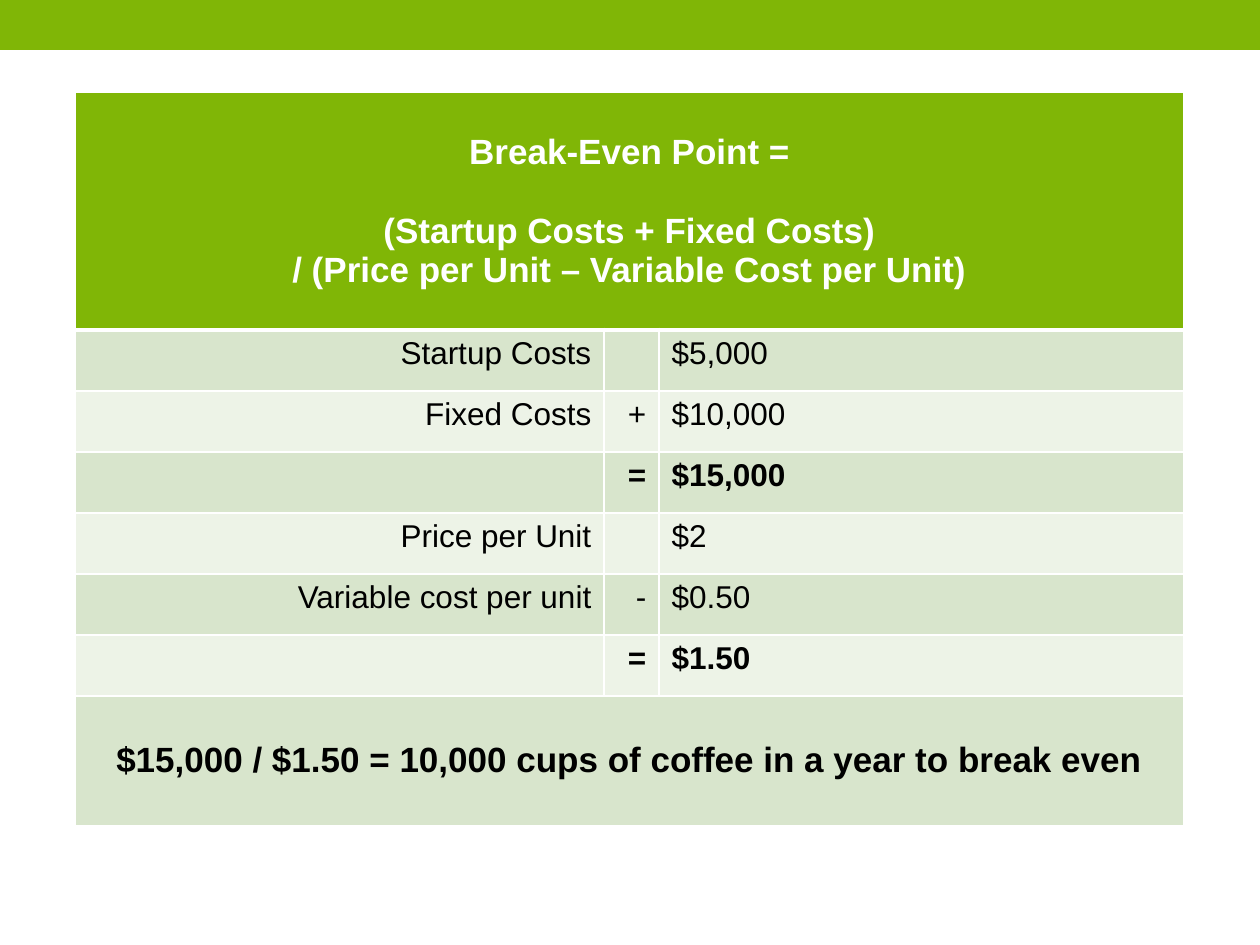
from dataclasses import dataclass

from lxml import etree
from pptx import Presentation
from pptx.dml.color import RGBColor
from pptx.enum.shapes import MSO_SHAPE
from pptx.enum.text import MSO_ANCHOR, PP_ALIGN
from pptx.oxml.ns import qn
from pptx.util import Emu, Pt

RECTANGLE = MSO_SHAPE.RECTANGLE
LEFT, CENTER, RIGHT = PP_ALIGN.LEFT, PP_ALIGN.CENTER, PP_ALIGN.RIGHT
TOP, MIDDLE = MSO_ANCHOR.TOP, MSO_ANCHOR.MIDDLE

PX_PER_INCH = 126
SLIDE_WIDTH, SLIDE_HEIGHT = 1260, 945


@dataclass(frozen=True)
class Theme:
    font: str = "Arial"
    green: str = "80B606"
    bands: tuple = ("D8E5CC", "EDF3E7")
    white: str = "FFFFFF"
    black: str = "000000"
    body_size: int = 18
    strong_size: int = 20
    formula_gap: int = 23
    border: int = 1
    header_border: int = 3


THEME = Theme()

COLUMN_WIDTHS = (529, 55, 525)
HEADER_HEIGHT, ROW_HEIGHT, RESULT_HEIGHT = 238, 61, 130

FORMULA = (
    "Break-Even Point =\n"
    "(Startup Costs + Fixed Costs)\n"
    "/ (Price per Unit – Variable Cost per Unit)"
)
COSTS = (
    ("Startup Costs", "", "$5,000"),
    ("Fixed Costs", "+", "$10,000"),
    ("", "=", "$15,000"),
    ("Price per Unit", "", "$2"),
    ("Variable cost per unit", "-", "$0.50"),
    ("", "=", "$1.50"),
)
RESULT = "$15,000 / $1.50 = 10,000 cups of coffee in a year to break even"


def px(length):
    return Emu(round(length * 914400 / PX_PER_INCH))


def set_borders(cell, bottom_width):
    properties = cell._tc.get_or_add_tcPr()
    widths = {"a:lnL": THEME.border, "a:lnR": THEME.border,
              "a:lnT": THEME.border, "a:lnB": bottom_width}
    for tag, width in widths.items():
        line = etree.SubElement(properties, qn(tag), w=str(Pt(width)))
        fill = etree.SubElement(line, qn("a:solidFill"))
        etree.SubElement(fill, qn("a:srgbClr"), val=THEME.white)


def format_cell(cell, text, fill, color=THEME.black, size=THEME.body_size,
                bold=False, align=LEFT, anchor=TOP, bottom_width=THEME.border):
    set_borders(cell, bottom_width)
    cell.fill.solid()
    cell.fill.fore_color.rgb = RGBColor.from_string(fill)
    cell.vertical_anchor = anchor
    cell.text_frame.text = text
    for paragraph in cell.text_frame.paragraphs:
        paragraph.alignment = align
        font = paragraph.font
        for target in (font, *(run.font for run in paragraph.runs)):
            target.name = THEME.font
            target.size = Pt(size)
            target.bold = bold
            target.color.rgb = RGBColor.from_string(color)


def format_merged_row(table, row, text, fill, **style):
    first, last = table.cell(row, 0), table.cell(row, len(COLUMN_WIDTHS) - 1)
    first.merge(last)
    format_cell(first, text, fill, size=THEME.strong_size, bold=True,
                align=CENTER, anchor=MIDDLE, **style)
    return first


def add_top_band(slide, left, top, width, height):
    band = slide.shapes.add_shape(RECTANGLE, px(left), px(top), px(width), px(height))
    band.shadow.inherit = False
    band.fill.solid()
    band.fill.fore_color.rgb = RGBColor.from_string(THEME.green)
    band.line.fill.background()


def add_break_even_table(slide, left, top):
    heights = (HEADER_HEIGHT, *[ROW_HEIGHT] * len(COSTS), RESULT_HEIGHT)
    frame = slide.shapes.add_table(
        len(heights), len(COLUMN_WIDTHS), px(left), px(top),
        px(sum(COLUMN_WIDTHS)), px(sum(heights)))
    table = frame.table
    for column, width in zip(table.columns, COLUMN_WIDTHS):
        column.width = px(width)
    for row, height in zip(table.rows, heights):
        row.height = px(height)

    # Formula heading
    heading = format_merged_row(table, 0, FORMULA, THEME.green, color=THEME.white,
                                bottom_width=THEME.header_border)
    heading.text_frame.paragraphs[0].space_after = Pt(THEME.formula_gap)

    # Cost lines, with the totals in bold
    for index, values in enumerate(COSTS):
        is_total = values[1] == "="
        for column, (text, align) in enumerate(zip(values, (RIGHT, RIGHT, LEFT))):
            format_cell(table.cell(index + 1, column), text, THEME.bands[index % 2],
                        bold=is_total and column > 0, align=align)

    # Result
    format_merged_row(table, len(heights) - 1, RESULT, THEME.bands[len(COSTS) % 2])


def main():
    presentation = Presentation()
    presentation.slide_width = px(SLIDE_WIDTH)
    presentation.slide_height = px(SLIDE_HEIGHT)
    blank_layout = presentation.slide_layouts[6]
    slide = presentation.slides.add_slide(blank_layout)
    add_top_band(slide, 0, 0, SLIDE_WIDTH, 50)
    add_break_even_table(slide, 75, 92)
    presentation.save("out.pptx")


if __name__ == "__main__":
    main()
